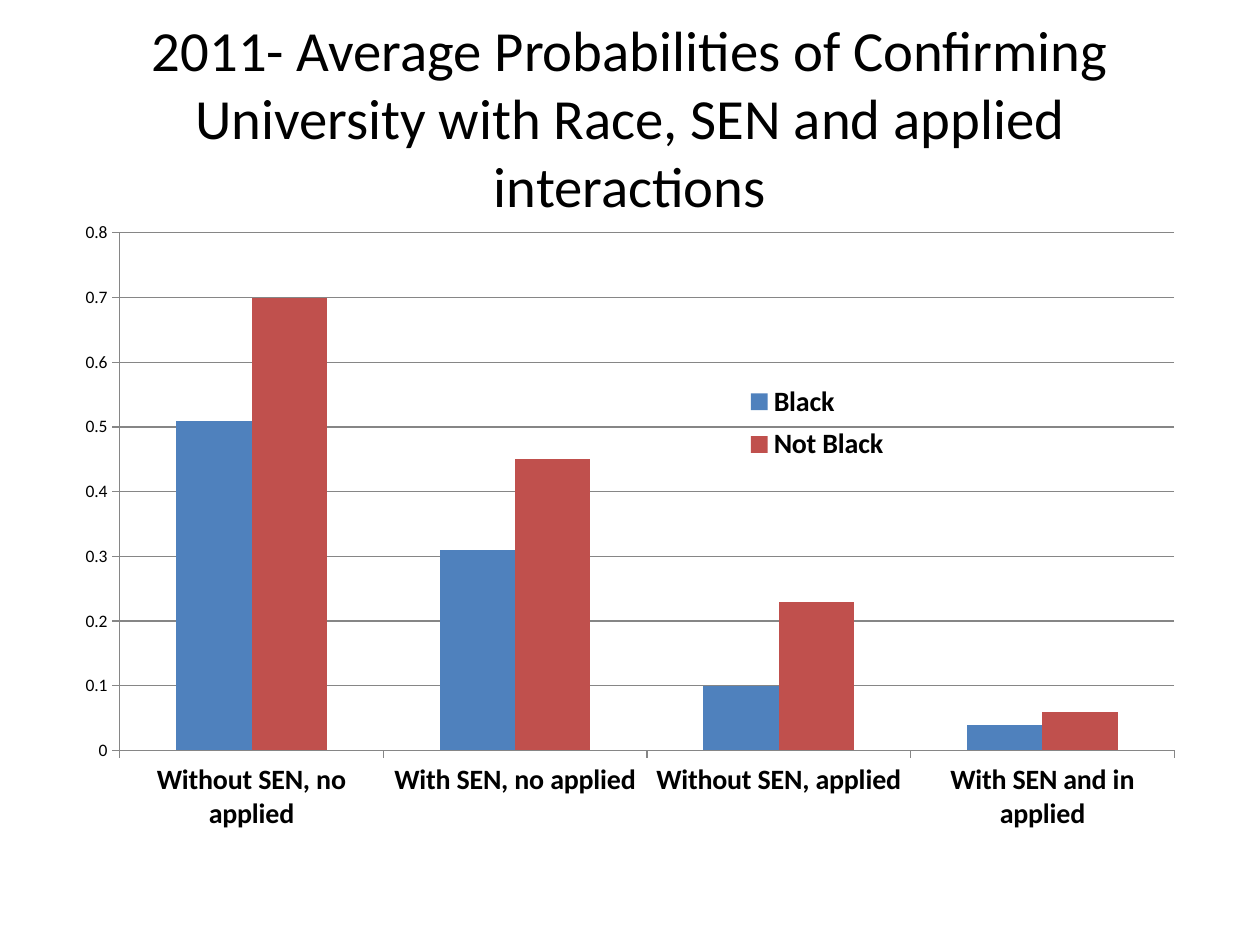
"""Build a slide with a clustered column chart of average probabilities."""
from pptx import Presentation
from pptx import util as u
from pptx.chart import data as cd
from pptx.dml.color import RGBColor
from pptx.enum import chart as ce, text as te
from pptx.oxml import parse_xml
from pptx.oxml.ns import nsdecls, qn

BLACK = RGBColor(0x00, 0x00, 0x00)
BLUE = RGBColor(0x4F, 0x81, 0xBD)
RED = RGBColor(0xC0, 0x50, 0x4D)
GRAY = RGBColor(0x86, 0x86, 0x86)
FONT = "Calibri"


def place(node, spot, box, inner=False):
    for old in node.findall(qn("c:layout")):
        node.remove(old)
    tags = '<c:layoutTarget val="inner"/>' if inner else ""
    tags += '<c:xMode val="edge"/><c:yMode val="edge"/>'
    for tag, val in zip("xywh", box):
        tags += f'<c:{tag} val="{val}"/>'
    node.insert(spot, parse_xml(
        f'<c:layout {nsdecls("c")}><c:manualLayout>{tags}</c:manualLayout></c:layout>'))


def style(font, size, bold=False):
    font.name = FONT
    font.size = u.Pt(size)
    font.bold = bold
    font.color.rgb = BLACK


prs = Presentation()
prs.slide_width, prs.slide_height = u.Inches(10), u.Inches(7.5)
slide = prs.slides.add_slide(prs.slide_layouts[6])

title = slide.shapes.add_textbox(u.Inches(0.5), u.Inches(0.3), u.Inches(9), u.Inches(1.25))
frame = title.text_frame
frame.word_wrap = True
frame.vertical_anchor = te.MSO_ANCHOR.MIDDLE
para = frame.paragraphs[0]
para.alignment = te.PP_ALIGN.CENTER
run = para.add_run()
run.text = "2011- Average Probabilities of Confirming University with Race, SEN and applied interactions"
style(run.font, 32.4)

data = cd.CategoryChartData()
data.categories = ["Without SEN, no applied", "With SEN, no applied",
                   "Without SEN, applied", "With SEN and in applied"]
data.add_series("Black", [0.51, 0.31, 0.1, 0.04])
data.add_series("Not Black", [0.7, 0.45, 0.23, 0.06])
chart = slide.shapes.add_chart(
    ce.XL_CHART_TYPE.COLUMN_CLUSTERED, u.Inches(0.5), u.Inches(1.75),
    u.Inches(9), u.Inches(4.95), data).chart
chart.has_title = False
style(chart.font, 10)

plot = chart.plots[0]
plot.gap_width = 150
plot.overlap = 0
plot.vary_by_categories = False
for bar, color in zip(plot.series, (BLUE, RED)):
    bar.format.fill.solid()
    bar.format.fill.fore_color.rgb = color

cats, vals = chart.category_axis, chart.value_axis
for axis, size, bold in ((cats, 16, True), (vals, 10, False)):
    axis.major_tick_mark = ce.XL_TICK_MARK.OUTSIDE
    axis.minor_tick_mark = ce.XL_TICK_MARK.NONE
    axis.format.line.color.rgb = GRAY
    style(axis.tick_labels.font, size, bold)
vals.minimum_scale, vals.maximum_scale, vals.major_unit = 0, 0.8, 0.1
vals.has_major_gridlines = True
vals.major_gridlines.format.line.color.rgb = GRAY

chart.has_legend = True
legend = chart.legend
legend.position = ce.XL_LEGEND_POSITION.RIGHT
legend.include_in_layout = True
style(legend.font, 16, True)
place(legend._element, 1, (0.58, 0.25, 0.17, 0.15))
place(chart._chartSpace.chart.plotArea, 0, (0.05, 0.02, 0.93, 0.83), True)

prs.save("out.pptx")
